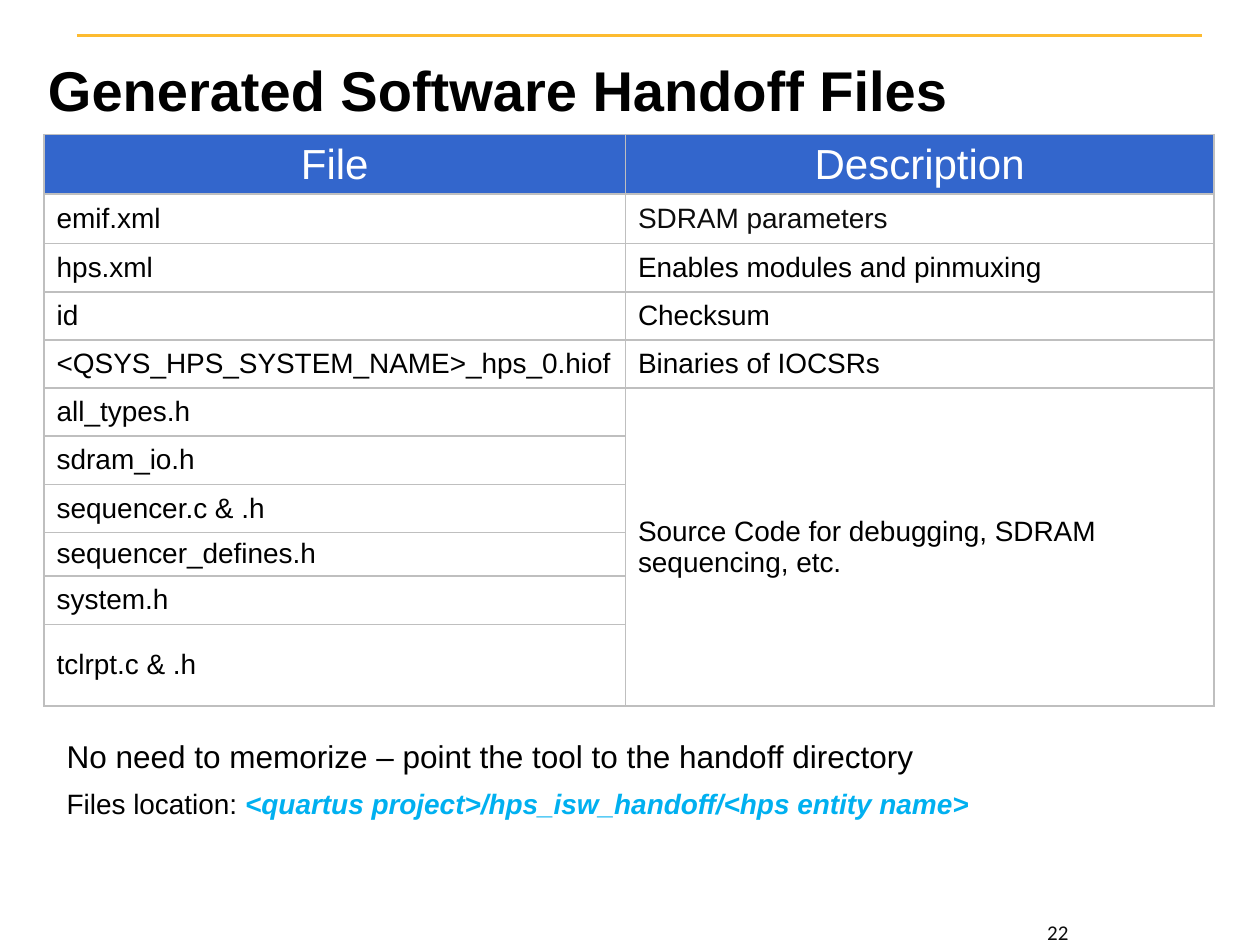
"""Build the slide listing the generated software handoff files."""
import pptx
import pptx.dml.color
import pptx.enum.shapes
import pptx.enum.text
import pptx.oxml
import pptx.oxml.ns
import pptx.util

Pt = pptx.util.Pt
ALIGN = pptx.enum.text.PP_ALIGN
MIDDLE = pptx.enum.text.MSO_ANCHOR.MIDDLE
NAMESPACE = pptx.oxml.ns.nsdecls("a")
COLORS = {"black": "000000", "ink": "0D0D0D", "white": "FFFFFF", "header": "3366CC",
          "border": "BFBFBF", "rule": "FDBB30", "path": "00B0F0"}


def style(span, size, color, bold=False, italic=False, name="Arial"):
    font = span.font
    font.name, font.size, font.bold, font.italic = name, Pt(size), bold, italic
    font.color.rgb = pptx.dml.color.RGBColor.from_string(COLORS[color])


def add_text(left, top, width, height, spans, wrap=True):
    frame = page.shapes.add_textbox(Pt(left), Pt(top), Pt(width), Pt(height)).text_frame
    frame.word_wrap = wrap
    for text, options in spans:
        span = frame.paragraphs[0].add_run()
        span.text = text
        style(span, **options)
    return frame


deck = pptx.Presentation()
deck.slide_width, deck.slide_height = Pt(720), Pt(540)
page = deck.slides.add_slide(deck.slide_layouts[5])

rule = page.shapes.add_connector(
    pptx.enum.shapes.MSO_CONNECTOR.STRAIGHT, Pt(43.9), Pt(20.2), Pt(686.9), Pt(20.2))
rule.line.width = Pt(2)
rule.line.color.rgb = pptx.dml.color.RGBColor.from_string(COLORS["rule"])
rule._element.spPr.append(pptx.oxml.parse_xml(f"<a:effectLst {NAMESPACE}/>"))

title = page.shapes.title
title.left, title.top, title.width, title.height = Pt(20.2), Pt(15.1), Pt(656), Pt(72)
frame = title.text_frame
frame.text = "Generated Software Handoff Files"
frame.vertical_anchor = MIDDLE
frame.auto_size = pptx.enum.text.MSO_AUTO_SIZE.NONE
frame.paragraphs[0].alignment = ALIGN.LEFT
span = frame.paragraphs[0].runs[0]
style(span, 32, "black", bold=True)
span.font.fill._xPr.find(pptx.oxml.ns.qn("a:solidFill")).addnext(pptx.oxml.parse_xml(
    f'<a:effectLst {NAMESPACE}><a:outerShdw blurRad="38100" dist="38100" dir="2700000" algn="tl">'
    '<a:srgbClr val="000000"><a:alpha val="43000"/></a:srgbClr></a:outerShdw></a:effectLst>'))

rows = [
    ("File", "Description"),
    ("emif.xml", "SDRAM parameters"),
    ("hps.xml", "Enables modules and pinmuxing"),
    ("id", "Checksum"),
    ("<QSYS_HPS_SYSTEM_NAME>_hps_0.hiof", "Binaries of IOCSRs"),
    ("all_types.h", "Source Code for debugging, SDRAM sequencing, etc."),
    ("sdram_io.h", ""),
    ("sequencer.c & .h", ""),
    ("sequencer_defines.h", ""),
    ("system.h", ""),
    ("tclrpt.c & .h", ""),
]
heights = [34, 28.3] + [27.5] * 6 + [25, 27.5, 46.7]
table = page.shapes.add_table(
    len(rows), 2, Pt(25.2), Pt(77), Pt(668.4), Pt(sum(heights))).table
table.first_row = table.horz_banding = False
table.columns[0].width, table.columns[1].width = Pt(332.2), Pt(336.2)
for row, height in zip(table.rows, heights):
    row.height = Pt(height)
table.cell(5, 1).merge(table.cell(10, 1))

for row_index, texts in enumerate(rows):
    for column_index, text in enumerate(texts):
        cell = table.cell(row_index, column_index)
        properties = cell._tc.get_or_add_tcPr()
        for side in ("lnL", "lnR", "lnT", "lnB"):
            properties.append(pptx.oxml.parse_xml(
                f'<a:{side} {NAMESPACE} w="12700"><a:solidFill>'
                f'<a:srgbClr val="{COLORS["border"]}"/></a:solidFill></a:{side}>'))
        header = row_index == 0
        if header:
            cell.fill.solid()
            cell.fill.fore_color.rgb = pptx.dml.color.RGBColor.from_string(COLORS["header"])
        else:
            cell.fill.background()
            cell.vertical_anchor = MIDDLE
        if text:
            cell.text_frame.text = text
            para = cell.text_frame.paragraphs[0]
            para.alignment = ALIGN.CENTER if header else ALIGN.LEFT
            color = "white" if header else "ink" if text == "SDRAM parameters" else "black"
            style(para.runs[0], 24 if header else 16, color)

add_text(31, 445.7, 569.5, 26.6, [
    ("Files location: ", {"size": 16, "color": "black"}),
    ("<quartus project>/hps_isw_handoff/<hps entity name>",
     {"size": 16, "color": "path", "bold": True, "italic": True})])
add_text(31, 417.6, 503.3, 28.8, [
    ("No need to memorize – point the tool to the handoff directory",
     {"size": 18, "color": "black"})], wrap=False)
number = add_text(543.6, 525.6, 121.7, 14.4, [
    ("22", {"size": 12, "color": "ink", "name": "Calibri"})])
number.margin_top = number.margin_bottom = 0
number.vertical_anchor = MIDDLE
number.paragraphs[0].alignment = ALIGN.CENTER

deck.save("out.pptx")
